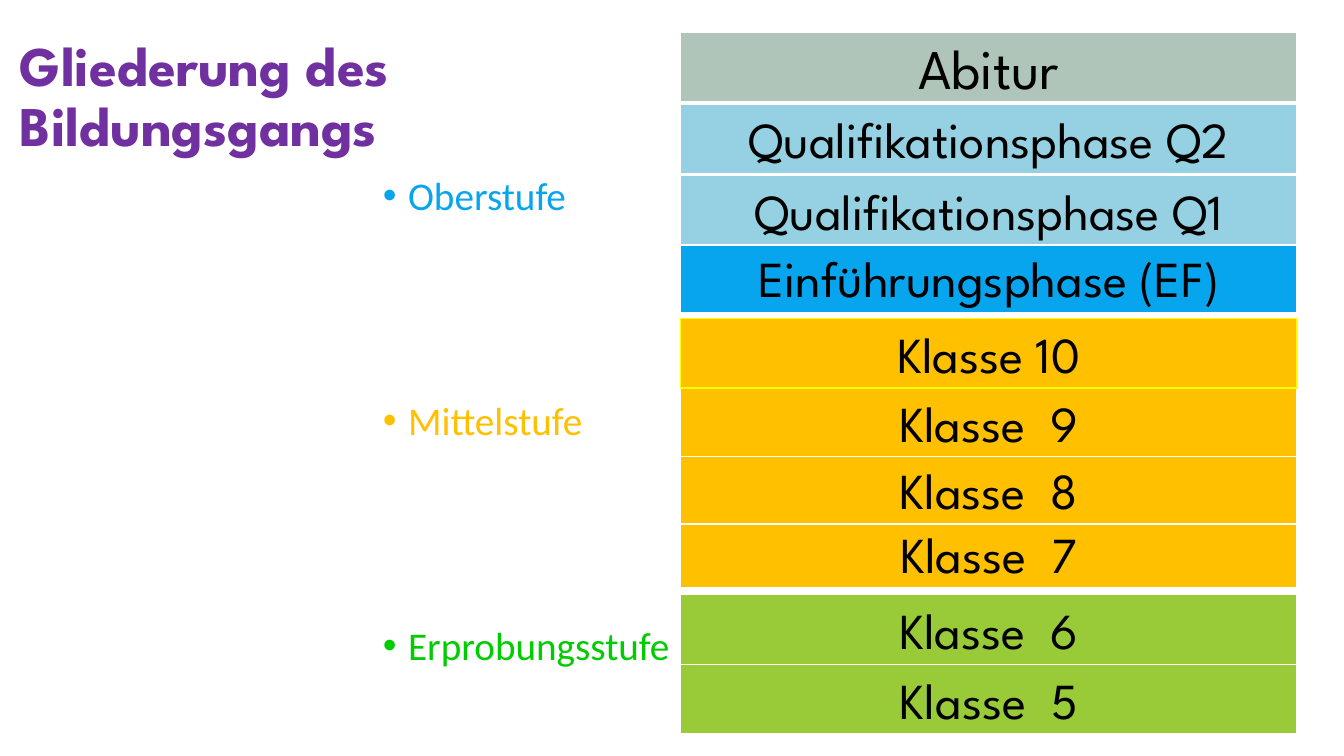
from dataclasses import dataclass

from lxml.etree import SubElement
from pptx import Presentation
from pptx.dml.color import RGBColor
from pptx.enum.shapes import MSO_SHAPE
from pptx.enum.text import MSO_ANCHOR as ANCHOR, PP_ALIGN as ALIGN
from pptx.oxml.ns import qn
from pptx.util import Pt


@dataclass(frozen=True)
class Theme:
    heading_font: str = "League Spartan"
    body_font: str = "Calibri"
    title_size: int = 40
    step_size: int = 36
    stage_size: int = 28
    purple: str = "7030A0"
    black: str = "000000"
    white: str = "FFFFFF"
    yellow: str = "FFFF00"
    sage: str = "AFC5B9"
    light_blue: str = "95D1E2"
    blue: str = "08A5EF"
    amber: str = "FFC000"
    lime: str = "99CB38"
    green: str = "00CC00"


T = Theme()

STEP_LEFT, STEP_WIDTH, STEP_HEIGHT = 486, 440.6, 49.7
STEPS = [
    ("Klasse  5", 474.5, T.lime),
    ("Klasse  6", 424.8, T.lime),
    ("Klasse  7", 370.1, T.amber),
    ("Klasse  8", 324.7, T.amber),
    ("Klasse  9", 276.5, T.amber),
    ("Klasse 10", 227.5, T.amber),
    ("Einführungsphase (EF)", 173.5, T.blue),
    ("Qualifikationsphase Q1", 125.3, T.light_blue),
    ("Qualifikationsphase Q2", 74.2, T.light_blue),
    ("Abitur", 23, T.sage),
]
STAGES = [
    ("Oberstufe", T.blue),
    ("Mittelstufe", T.amber),
    ("Erprobungsstufe", T.green),
]
STAGE_GAP = 130.5
BULLET_INDENT = 18


def add_run(p, text, font, size, color, bold=False):
    r = p.add_run()
    r.text = text
    r.font.name = font
    r.font.size = Pt(size)
    r.font.bold = bold
    r.font.color.rgb = RGBColor.from_string(color)


def add_text_frame(slide, left, top, width, height, anchor):
    tf = slide.shapes.add_textbox(Pt(left), Pt(top), Pt(width), Pt(height)).text_frame
    tf.word_wrap = True
    tf.vertical_anchor = anchor
    return tf


def set_bullet(p):
    pPr = p._p.get_or_add_pPr()
    pPr.set("marL", str(Pt(BULLET_INDENT)))
    pPr.set("indent", str(-Pt(BULLET_INDENT)))
    SubElement(pPr, qn("a:buFont"), typeface="Arial")
    SubElement(pPr, qn("a:buChar"), char="•")


def add_title(slide, text):
    tf = add_text_frame(slide, 7.2, 18, 369.4, 104.4, ANCHOR.MIDDLE)
    p = tf.paragraphs[0]
    p.line_spacing = 0.9
    add_run(p, text, T.heading_font, T.title_size, T.purple, bold=True)


def add_step(slide, text, top, fill, line=T.white, size=T.step_size):
    sp = slide.shapes.add_shape(
        MSO_SHAPE.RECTANGLE, Pt(STEP_LEFT), Pt(top), Pt(STEP_WIDTH), Pt(STEP_HEIGHT)
    )
    sp.shadow.inherit = False
    sp.fill.solid()
    sp.fill.fore_color.rgb = RGBColor.from_string(fill)
    sp.line.color.rgb = RGBColor.from_string(line)
    sp.line.width = Pt(1)
    tf = sp.text_frame
    tf.word_wrap = True
    tf.vertical_anchor = ANCHOR.MIDDLE
    p = tf.paragraphs[0]
    p.alignment = ALIGN.CENTER
    add_run(p, text, T.heading_font, size, T.black)


def add_stages(slide):
    tf = add_text_frame(slide, 266.4, 122.4, 236.2, 394.6, ANCHOR.TOP)
    for i, (text, color) in enumerate(STAGES):
        p = tf.add_paragraph() if i else tf.paragraphs[0]
        set_bullet(p)
        p.line_spacing = 0.9
        if i:
            p.space_before = Pt(STAGE_GAP)
        add_run(p, text, T.body_font, T.stage_size, color)


def main():
    prs = Presentation()
    prs.slide_width, prs.slide_height = Pt(960), Pt(540)
    slide = prs.slides.add_slide(prs.slide_layouts[6])
    add_title(slide, "Gliederung des Bildungsgangs")
    for text, top, fill in STEPS:
        line = T.yellow if text == "Klasse 10" else T.white
        size = T.title_size if text == "Abitur" else T.step_size
        add_step(slide, text, top, fill, line, size)
    add_stages(slide)
    prs.save("out.pptx")


if __name__ == "__main__":
    main()
